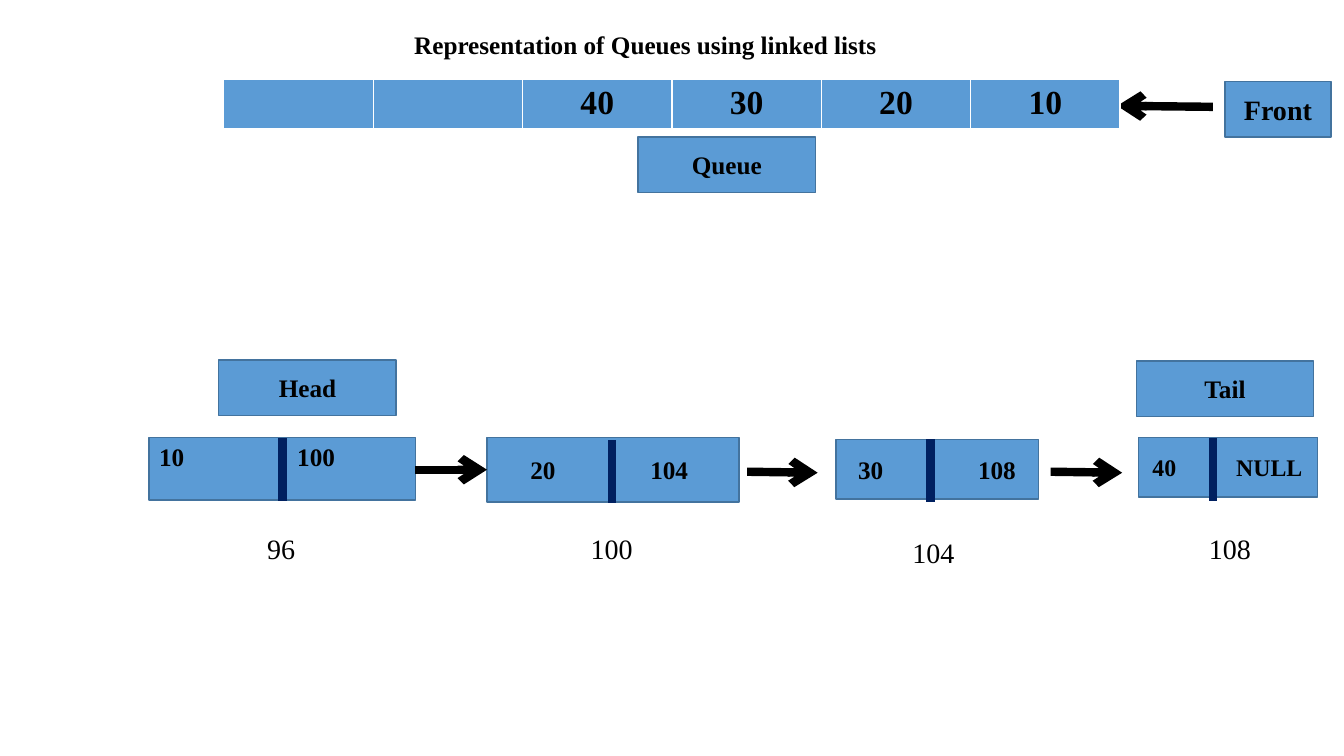
from lxml.etree import SubElement
from pptx import Presentation
from pptx.dml.color import RGBColor
from pptx.enum.shapes import MSO_CONNECTOR as Connector, MSO_SHAPE as Shape
from pptx.enum.text import MSO_ANCHOR as Anchor, MSO_AUTO_SIZE as AutoSize, PP_ALIGN as Align
from pptx.oxml.ns import qn
from pptx.util import Inches, Pt

COLORS = {"fill": "5B9BD5", "edge": "43739E", "divider": "002060", "ink": "000000", "grid": "FFFFFF"}
FONT = "Times New Roman"
TITLE = ("Representation of Queues using linked lists", 4.01, 0.24, 4.83, 0.4)
QUEUE = ["", "", "40", "30", "20", "10"]
QUEUE_AT = (2.22, 0.79, 8.89, 0.48)

# text, left, top, width, size
LABELS = [
    ("Head", 2.17, 3.57, 1.76, 18),
    ("Tail", 11.27, 3.58, 1.76, 18),
    ("Front", 12.15, 0.81, 1.05, 20),
    ("Queue", 6.33, 1.36, 1.76, 18),
]
LABEL_HEIGHT = 0.55
NODES = [
    dict(value="10", link="100", box=(1.48, 4.34, 2.64, 0.62), text_x=(1.58, 2.95), size=18,
         anchor=Anchor.TOP, divider=(2.8, 4.35), address=("96", 2.55, 5.22)),
    dict(value="20", link="104", box=(4.83, 4.34, 2.5, 0.64), text_x=(5.26, 6.45), size=18,
         anchor=Anchor.MIDDLE, divider=(6.07, 4.37), address=("100", 5.76, 5.22)),
    dict(value="30", link="108", box=(8.29, 4.36, 2.01, 0.59), text_x=(8.51, 9.7), size=18,
         anchor=Anchor.MIDDLE, divider=(9.23, 4.36), address=("104", 8.95, 5.26)),
    dict(value="40", link="NULL", box=(11.29, 4.34, 1.78, 0.59), text_x=(11.43, 12.26), size=17,
         anchor=Anchor.MIDDLE, divider=(12.03, 4.35), address=("108", 11.89, 5.22)),
]
DIVIDER_HEIGHT = 0.62
ARROWS = [
    (4.12, 4.66, 4.83, 4.66),
    (7.41, 4.68, 8.11, 4.69),
    (10.42, 4.68, 11.13, 4.69),
    (12.03, 1.06, 11.08, 1.05),
]

deck = Presentation()
deck.slide_width, deck.slide_height = Inches(13.33), Inches(7.5)
page = deck.slides.add_slide(deck.slide_layouts[6])


def color(name):
    return RGBColor.from_string(COLORS[name])


def write(frame, text, size, bold=True, align=Align.CENTER):
    frame.text = text
    para = frame.paragraphs[0]
    para.alignment = align
    for span in para.runs:
        span.font.name, span.font.size, span.font.bold = FONT, Pt(size), bold
        span.font.color.rgb = color("ink")
    return para


def add_box(left, top, width, height):
    box = page.shapes.add_shape(Shape.RECTANGLE, *map(Inches, (left, top, width, height)))
    box.shadow.inherit = False
    box.fill.solid()
    box.fill.fore_color.rgb = color("fill")
    box.line.color.rgb = color("edge")
    box.line.width = Pt(1)
    box.text_frame.vertical_anchor = Anchor.MIDDLE
    return box


def add_line(ends, name, arrow=False):
    line = page.shapes.add_connector(Connector.STRAIGHT, *map(Inches, ends))
    line.line.color.rgb = color(name)
    line.line.width = Pt(6)
    if arrow:
        SubElement(line.line._get_or_add_ln(), qn("a:tailEnd"), type="arrow")
    SubElement(line._element.spPr, qn("a:effectLst"))


def add_text(text, place, size, bold, wrap):
    frame = page.shapes.add_textbox(*map(Inches, place)).text_frame
    frame.word_wrap = wrap
    frame.auto_size = AutoSize.SHAPE_TO_FIT_TEXT
    write(frame, text, size, bold, Align.LEFT)


def add_node(node):
    left = node["box"][0]
    value_x, link_x = node["text_x"]
    frame = add_box(*node["box"]).text_frame
    frame.vertical_anchor = node["anchor"]
    frame.margin_left, frame.margin_right = Inches(value_x - left), 0
    frame.margin_top = frame.margin_bottom = Inches(0.04)
    para = write(frame, f"{node['value']}\t{node['link']}", node["size"], align=Align.LEFT)
    tabs = SubElement(para._p.get_or_add_pPr(), qn("a:tabLst"))
    SubElement(tabs, qn("a:tab"), pos=str(Inches(link_x - value_x)), algn="l")
    x, y = node["divider"]
    add_line((x, y, x, y + DIVIDER_HEIGHT), "divider")
    address, x, y = node["address"]
    add_text(address, (x, y, 1.45, 0.44), 20, False, True)


def add_queue():
    table = page.shapes.add_table(1, len(QUEUE), *map(Inches, QUEUE_AT)).table
    table.first_row = table.horz_banding = False
    for cell, value in zip(table.rows[0].cells, QUEUE):
        write(cell.text_frame, value, 24)
        properties = cell._tc.get_or_add_tcPr()
        for side, points in (("lnL", 1), ("lnR", 1), ("lnT", 1), ("lnB", 3)):
            border = SubElement(properties, qn(f"a:{side}"), w=str(Pt(points)))
            fill = SubElement(border, qn("a:solidFill"))
            SubElement(fill, qn("a:srgbClr"), val=COLORS["grid"])
        cell.fill.solid()
        cell.fill.fore_color.rgb = color("fill")


for node in NODES:
    add_node(node)
for ends in ARROWS:
    add_line(ends, "ink", arrow=True)
for text, left, top, width, size in LABELS:
    write(add_box(left, top, width, LABEL_HEIGHT).text_frame, text, size)
add_text(TITLE[0], TITLE[1:], 18, True, False)
add_queue()

deck.save("out.pptx")
